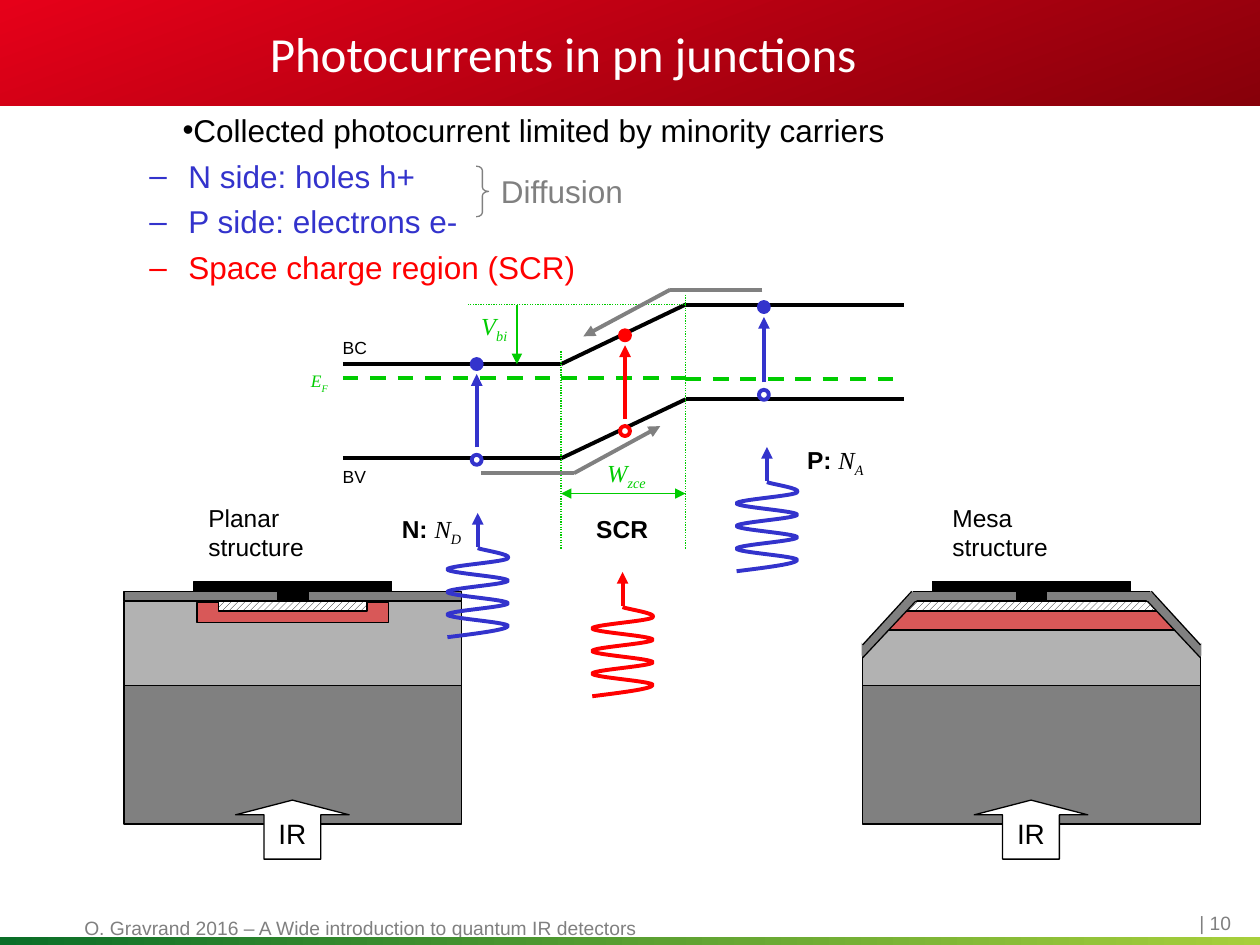
import lxml.etree as etree
import pptx
import pptx.dml.color
import pptx.enum.dml
import pptx.enum.shapes
import pptx.enum.text
import pptx.oxml.ns
import pptx.util

Cm, Pt = pptx.util.Cm, pptx.util.Pt
RGB = pptx.dml.color.RGBColor.from_string
qn = pptx.oxml.ns.qn
SHAPE = pptx.enum.shapes.MSO_SHAPE
DASH = pptx.enum.dml.MSO_LINE
ANCHOR = pptx.enum.text.MSO_ANCHOR

THEME = {
    "black": RGB("000000"), "white": RGB("FFFFFF"), "grey": RGB("808080"),
    "light": RGB("B2B2B2"), "blue": RGB("3333CC"), "red": RGB("FF0000"),
    "green": RGB("00CC00"), "thin": Pt(0.75), "thick": Pt(2.25),
    "banner": (RGB("E60019"), RGB("87000A")), "strip": (RGB("0A6E28"), RGB("A7CF3B")),
    "title": {"name": "Calibri", "size": Pt(28)},
    "body": {"name": "Arial", "size": Pt(18)},
    "arrow": {"name": "Arial", "size": Pt(16)},
    "label": {"name": "Arial", "size": Pt(14)},
    "strong": {"name": "Arial", "size": Pt(14), "bold": True},
    "symbol": {"name": "Times New Roman", "size": Pt(14), "italic": True},
    "footer": {"name": "Arial", "size": Pt(11)},
    "small": {"name": "Arial", "size": Pt(10)},
    "small symbol": {"name": "Times New Roman", "size": Pt(10), "italic": True},
}

presentation = pptx.Presentation()
presentation.slide_width, presentation.slide_height = Cm(25.4), Cm(19.05)
slide = presentation.slides.add_slide(presentation.slide_layouts[6])
writings = []  # (paragraph, colour, [(text, style, is_subscript)])


def add_shape(kind, left, top, width, height, fill, line=None, weight="thin"):
    shape = slide.shapes.add_shape(kind, Cm(left), Cm(top), Cm(width), Cm(height))
    shape.shadow.inherit = False
    if fill:
        shape.fill.solid()
        shape.fill.fore_color.rgb = THEME[fill]
    else:
        shape.fill.background()
    if line:
        shape.line.color.rgb = THEME[line]
        shape.line.width = THEME[weight]
    else:
        shape.line.fill.background()
    return shape


def add_line(start, end, color, weight="thick", dash=None, arrows=()):
    """Draw a straight line; arrows may hold headEnd (start) and tailEnd (end)."""
    connector = slide.shapes.add_connector(
        pptx.enum.shapes.MSO_CONNECTOR.STRAIGHT, *map(Cm, start + end))
    connector.line.color.rgb = THEME[color]
    connector.line.width = THEME[weight]
    if dash:
        connector.line.dash_style = dash
    properties = connector._element.spPr
    for arrow in arrows:
        etree.SubElement(properties.find(qn("a:ln")), qn("a:" + arrow), type="triangle")
    etree.SubElement(properties, qn("a:effectLst"))


# Title band
banner = add_shape(SHAPE.RECTANGLE, 0, 0, 25.4, 2.13, "red")

# Bulleted text
body = slide.shapes.add_textbox(Cm(1.7), Cm(2.11), Cm(22.38), Cm(15.04)).text_frame
body.word_wrap = True
bullets = [
    ("•", 1.73, 0, "black", "Collected photocurrent limited by minority carriers"),
    ("–", 1.85, -0.79, "blue", "N side: holes h+"),
    ("–", 1.85, -0.79, "blue", "P side: electrons e-"),
    ("–", 1.85, -0.79, "red", "Space charge region (SCR)"),
]
for index, (bullet, margin, indent, color, text) in enumerate(bullets):
    paragraph = body.add_paragraph() if index else body.paragraphs[0]
    properties = paragraph._p.get_or_add_pPr()
    properties.set("marL", str(Cm(margin)))
    properties.set("indent", str(Cm(indent)))
    etree.SubElement(properties, qn("a:buFont"), typeface="Arial")
    etree.SubElement(properties, qn("a:buChar"), char=bullet)
    if index:
        paragraph.level = 1
        paragraph.space_before = Pt(4.6)
    writings.append((paragraph, color, [(text, "body", False)]))

# Planar and mesa devices: left, hatched layer and junction as (offset, top, width, height)
planar_left, mesa_left, device_width = 2.5, 17.39, 6.81
devices = [
    (planar_left, (1.9, 12.12, 3, 0.2), (1.47, 12.14, 3.86, 0.41)),
    (mesa_left, (0, 12.12, 6.79, 0.2), (0.15, 12.32, 6.5, 0.38)),
]
common_layers = [
    (0, 12.12, device_width, 1.7, "light", "black"),
    (0, 13.82, device_width, 2.79, "grey", "black"),
    (0, 10.92, device_width, 1.2, "white", None),
    (0, 11.92, device_width, 0.2, "grey", "black"),
    (1.41, 11.72, 3.99, 0.2, "black", "black"),
    (3.1, 11.92, 0.61, 0.2, "black", "black"),
]
for left, hatched, junction in devices:
    for offset, top, width, height, fill, line in common_layers:
        add_shape(SHAPE.RECTANGLE, left + offset, top, width, height, fill, line)
    layer = add_shape(SHAPE.RECTANGLE, left + junction[0], *junction[1:], "red", "black")
    red = layer._element.spPr.find(qn("a:solidFill"))[0]
    etree.SubElement(red, qn("a:alpha"), val="50000")
    layer = add_shape(SHAPE.RECTANGLE, left + hatched[0], *hatched[1:], "white", "black")
    layer.fill.patterned()
    layer.fill.pattern = pptx.enum.dml.MSO_PATTERN.WIDE_UPWARD_DIAGONAL
    layer.fill.fore_color.rgb = THEME["black"]
    layer.fill.back_color.rgb = THEME["white"]

    light = add_shape(SHAPE.UP_ARROW, left + 2.25, 16.13, 2.29, 1.19, "white", "black")
    light.adjustments[1] = 0.25
    light.text_frame.word_wrap = False
    light.text_frame.vertical_anchor = ANCHOR.MIDDLE
    paragraph = light.text_frame.paragraphs[0]
    paragraph.alignment = pptx.enum.text.PP_ALIGN.CENTER
    writings.append((paragraph, "black", [("IR", "arrow", False)]))

# Bevelled mesa edges
for edge, inward, mask_left in (
    (mesa_left, 1, mesa_left - 1.32),
    (mesa_left + device_width, -1, mesa_left + device_width + 0.02),
):
    for top, fill in ((11.94, "grey"), (11.68, "white")):
        add_shape(SHAPE.ISOSCELES_TRIANGLE, edge - 1.24, top, 2.48, 1.3, fill).rotation = 180
    add_line((edge, 13.26), (edge + inward * 1.07, 12.12), "black", "thin")
    add_line((edge, 13), (edge + inward * 0.99, 11.92), "black", "thin")
    add_shape(SHAPE.RECTANGLE, mask_left, 11.71, 1.3, 1.6, "white")

brace = add_shape(SHAPE.RIGHT_BRACE, 9.6, 3.35, 0.25, 1.02, None, "grey")
brace.adjustments[0] = 0.34

# Band diagram
n_start, scr_start, scr_end, p_end = 6.91, 11.31, 13.82, 18.22
n_conduction, p_conduction = 7.34, 6.14
for n_level, p_level, color, dash in (
    (n_conduction, p_conduction, "black", None),
    (9.24, 8.05, "black", None),
    (7.62, 7.64, "green", DASH.DASH),
):
    slope_end = p_level if color == "black" else n_level
    add_line((n_start, n_level), (scr_start, n_level), color, dash=dash)
    add_line((scr_start, n_level), (scr_end, slope_end), color, dash=dash)
    add_line((scr_end, p_level), (p_end, p_level), color, dash=dash)

for start, end in (
    ((scr_end, p_conduction), (9.42, p_conduction)),
    ((scr_start, 7.08), (scr_start, 11.08)),
    ((scr_end, 5.94), (scr_end, 11.08)),
):
    add_line(start, end, "green", "thin", DASH.ROUND_DOT)
add_line((10.42, p_conduction), (10.42, n_conduction), "green", "thin", arrows=["tailEnd"])
add_line((scr_start, 9.95), (scr_end, 9.95), "green", "thin", arrows=["headEnd", "tailEnd"])

# Electron and hole pairs
for x, electron, hole, color in (
    (9.61, 7.34, 9.27, "blue"), (12.6, 6.76, 8.69, "red"), (15.4, 6.19, 7.96, "blue"),
):
    for y, fill in ((electron, color), (hole, "white")):
        add_shape(SHAPE.OVAL, x - 0.1, y - 0.1, 0.2, 0.2, fill, color, "thick")
    add_line((x, hole - 0.25), (x, electron + 0.2), color, arrows=["tailEnd"])

# Carrier drift
for start, bend, end in (
    ((9.7, 9.54), (11.57, 9.54), (13.31, 8.59)),
    ((15.37, 5.84), (13.51, 5.84), (11.76, 6.78)),
):
    add_line(start, bend, "grey")
    add_line(bend, end, "grey", arrows=["tailEnd"])

# Photons: Bézier control points, swinging from side to side at equal steps
swing, step = 0.61, 0.076
wave = [(0.1, 0.04), (0.71, 0.13), (swing, 0.2)]
for turn in range(7):
    side = swing if turn % 2 == 0 else -swing
    last = turn == 6
    for part, dx in enumerate((side, 0 if last else -side, -side), start=1):
        wave.append((dx, 0.2 + (3 * turn + part) * step))
for x, y, color in ((9.63, 11.05, "blue"), (15.46, 9.72, "blue"), (12.55, 12.24, "red")):
    add_line((x, y - 0.03), (x, y - 0.71), color, arrows=["tailEnd"])
    builder = slide.shapes.build_freeform(Cm(x), Cm(y))
    builder.add_line_segments([(Cm(x + dx), Cm(y + dy)) for dx, dy in wave], close=False)
    photon = builder.convert_to_shape()
    segments = list(photon._element.iter(qn("a:lnTo")))
    for first in range(0, len(segments), 3):
        curve = etree.SubElement(segments[first].getparent(), qn("a:cubicBezTo"))
        for segment in segments[first:first + 3]:
            curve.append(segment[0])
            segment.getparent().remove(segment)
    photon.shadow.inherit = False
    photon.fill.background()
    photon.line.color.rgb = THEME[color]
    photon.line.width = THEME["thick"]

# Labels: left, top, width, height, colour, (text, style, subscript) runs
labels = [
    (5.19, 0.58, 16.84, 0.99, "white", [("Photocurrents in pn junctions", "title", False)]),
    (1.45, 18.34, 12.95, 0.7, "grey", [
        ("O. Gravrand 2016 – A Wide introduction to quantum IR detectors", "footer", False)]),
    (23.93, 18.25, 1.47, 0.74, "grey", [("| 10", "footer", False)]),
    (3.95, 10.01, 3.2, 0.84, "black", [("Planar structure", "label", False)]),
    (18.95, 10.01, 3.2, 0.84, "black", [("Mesa structure", "label", False)]),
    (9.85, 3.35, 2.97, 1.02, "grey", [("Diffusion", "body", False)]),
    (6.66, 9.27, 0.99, 0.69, "black", [("BV", "small", False)]),
    (6.66, 6.66, 0.99, 0.69, "black", [("BC", "small", False)]),
    (6.02, 7.34, 0.89, 0.69, "green", [("E", "small symbol", False), ("F", "small symbol", True)]),
    (9.45, 6.15, 1.07, 0.84, "green", [("V", "symbol", False), ("bi", "symbol", True)]),
    (11.99, 9.11, 1.32, 0.84, "green", [("W", "symbol", False), ("zce", "symbol", True)]),
    (7.85, 10.24, 1.73, 0.84, "black", [
        ("N: ", "strong", False), ("N", "symbol", False), ("D", "symbol", True)]),
    (16.02, 8.84, 1.68, 0.84, "black", [
        ("P: ", "strong", False), ("N", "symbol", False), ("A", "symbol", True)]),
    (11.77, 10.24, 1.55, 0.84, "black", [("SCR", "strong", False)]),
]
for left, top, width, height, color, runs in labels:
    frame = slide.shapes.add_textbox(Cm(left), Cm(top), Cm(width), Cm(height)).text_frame
    frame.word_wrap = True
    frame.margin_right = 0
    frame.vertical_anchor = ANCHOR.MIDDLE if runs[0][1] == "title" else ANCHOR.TOP
    writings.append((frame.paragraphs[0], color, runs))

for paragraph, color, runs in writings:
    for text, style, is_subscript in runs:
        run = paragraph.add_run()
        run.text = text
        for name, value in THEME[style].items():
            setattr(run.font, name, value)
        run.font.color.rgb = THEME[color]
        if is_subscript:
            run._r.get_or_add_rPr().set("baseline", "-25000")

# Bottom strip and gradients
strip = add_shape(SHAPE.RECTANGLE, 0, 18.89, 25.4, 0.16, "green")
for shape, angle, name in ((banner, 290, "banner"), (strip, 0, "strip")):
    shape.fill.gradient()
    shape.fill.gradient_angle = angle
    for stop, color in zip(shape.fill.gradient_stops, THEME[name]):
        stop.color.rgb = color

presentation.save("out.pptx")
